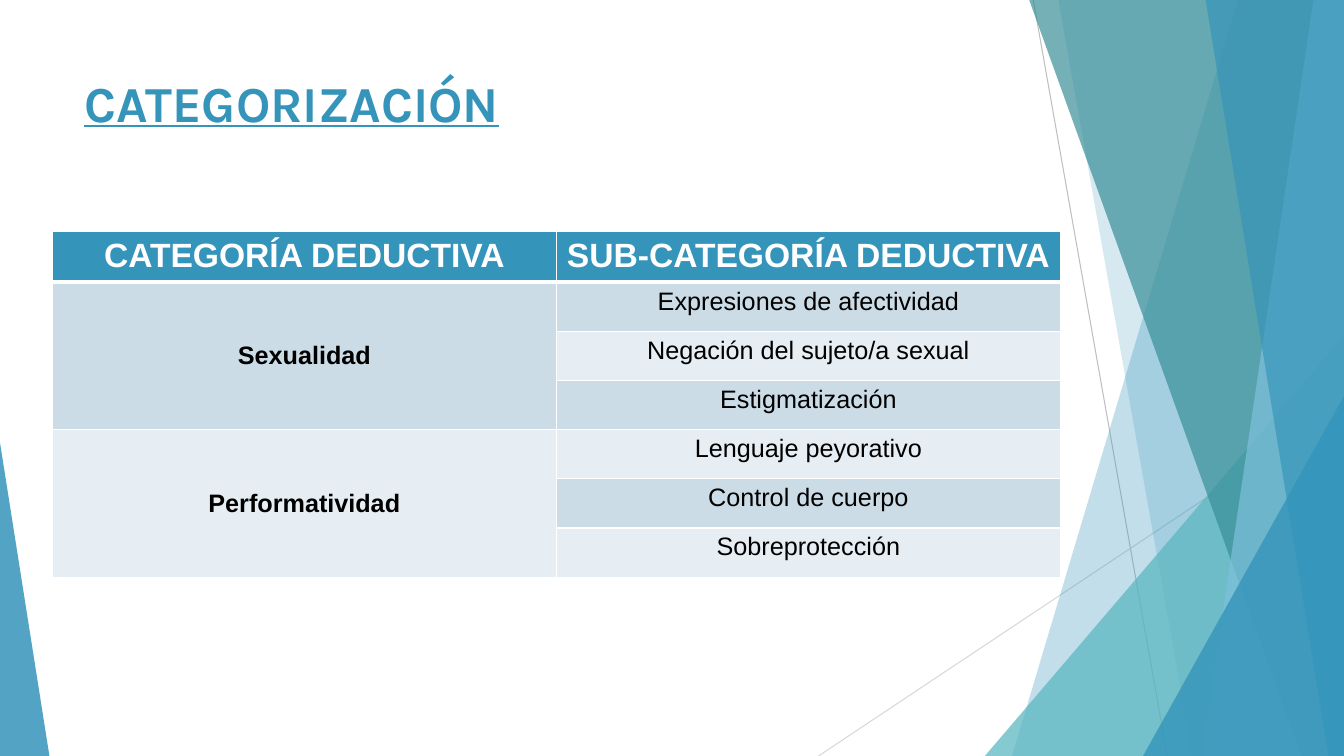
from lxml import etree
from pptx import Presentation
from pptx import util as u
from pptx.dml.color import RGBColor
from pptx.enum import shapes, text
from pptx.oxml import ns

HUES = {
    "blue": "3494BA", "aqua": "58B6C0", "teal": "398F98", "sky": "7EC0DB",
    "gray": "BFBFBF", "pale": "D8D8D8", "white": "FFFFFF", "black": "000000",
    "dark": "CCDCE6", "light": "E7EEF3",
}
GROUPS = {
    "Sexualidad": ["Expresiones de afectividad", "Negación del sujeto/a sexual", "Estigmatización"],
    "Performatividad": ["Lenguaje peyorativo", "Control de cuerpo", "Sobreprotección"],
}
HEADS = ["CATEGORÍA DEDUCTIVA", "SUB-CATEGORÍA DEDUCTIVA"]


class Deck:
    def __init__(self):
        self.show = Presentation()
        self.show.slide_width = u.Inches(13.33)
        self.show.slide_height = u.Inches(7.5)
        self.slide = self.show.slides.add_slide(self.show.slide_layouts[6])
        self.items = self.slide.shapes

    def x(self, share):
        return round(self.show.slide_width * share / 100)

    def y(self, share):
        return round(self.show.slide_height * share / 100)

    def box(self, left, top, width, height):
        return self.x(left), self.y(top), self.x(width), self.y(height)

    def color(self, name):
        return RGBColor.from_string(HUES[name])

    def child(self, node, tag, **attrs):
        return etree.SubElement(node, ns.qn(tag), attrs)

    def paint(self, shape, hue, alpha):
        shape.shadow.inherit = False
        shape.line.fill.background()
        shape.fill.solid()
        shape.fill.fore_color.rgb = self.color(hue)
        tint = shape.fill._xPr.find(ns.qn("a:solidFill"))[0]
        self.child(tint, "a:alpha", val=str(alpha * 1000))

    def line(self, x1, y1, x2, y2, hue):
        line = self.items.add_connector(
            shapes.MSO_CONNECTOR.STRAIGHT, self.x(x1), self.y(y1), self.x(x2), self.y(y2))
        line.line.color.rgb = self.color(hue)
        line.line.width = u.Pt(0.75)
        self.child(line._element.spPr, "a:effectLst")

    def band(self, top, foot, hue, alpha):
        pen = self.items.build_freeform(self.x(top), 0)
        pen.add_line_segments(
            [(self.x(100), 0), (self.x(100), self.y(100)), (self.x(foot), self.y(100))])
        self.paint(pen.convert_to_shape(), hue, alpha)

    def wedge(self, left, top, width, tip, hue, alpha):
        shape = self.items.add_shape(
            shapes.MSO_SHAPE.ISOSCELES_TRIANGLE, *self.box(left, top, width, 100 - top))
        shape.adjustments[0] = tip
        self.paint(shape, hue, alpha)

    def style(self, para, size, hue, bold, face="Arial"):
        font = para.runs[0].font
        font.name, font.size, font.bold = face, u.Pt(size), bold
        font.color.rgb = self.color(hue)
        return font

    def title(self, words, *place):
        frame = self.items.add_textbox(*self.box(*place)).text_frame
        frame.word_wrap = True
        frame.text = words
        self.style(frame.paragraphs[0], 36, "blue", True, "Karla").underline = True

    def border(self, cell, top, foot):
        props = cell._tc.get_or_add_tcPr()
        for spot, (side, width) in enumerate(zip("LRTB", (1, 1, top, foot))):
            edge = self.child(props, f"a:ln{side}", w=str(u.Pt(width)))
            fill = self.child(edge, "a:solidFill")
            self.child(fill, "a:srgbClr", val=HUES["white"])
            props.insert(spot, edge)

    def cell(self, cell, words, size, hue, bold, middle=False):
        cell.text = words
        para = cell.text_frame.paragraphs[0]
        para.alignment = text.PP_ALIGN.CENTER
        if middle:
            cell.vertical_anchor = text.MSO_ANCHOR.MIDDLE
        self.style(para, size, hue, bold)

    def table(self, heads, groups, left, top, width, height):
        count = 1 + sum(map(len, groups.values()))
        table = self.items.add_table(
            count, len(heads), *self.box(left, top, width, height * count)).table
        for row in range(count):
            table.rows[row].height = self.y(height)
            for col in range(len(heads)):
                cell = table.cell(row, col)
                cell.fill.solid()
                shade = "blue" if row == 0 else "dark" if row % 2 else "light"
                cell.fill.fore_color.rgb = self.color(shade)
                self.border(cell, 3 if row == 1 else 1, 3 if row == 0 else 1)
        for col, head in enumerate(heads):
            self.cell(table.cell(0, col), head, 24, "white", True)
        row = 1
        for name, parts in groups.items():
            first = table.cell(row, 0)
            first.merge(table.cell(row + len(parts) - 1, 0))
            self.cell(first, name, 18, "black", True, True)
            for part in parts:
                self.cell(table.cell(row, 1), part, 18, "black", False)
                row += 1


def main():
    deck = Deck()
    deck.line(76.88, 0, 86.85, 100, "gray")
    deck.line(100, 53.73, 60.9, 100, "pale")
    deck.band(92.1, 75.3, "blue", 30)
    deck.band(78.75, 88.73, "blue", 20)
    deck.wedge(73.28, 44.4, 26.72, 1, "aqua", 72)
    deck.band(76.58, 96.83, "teal", 70)
    deck.band(97.73, 89.4, "sky", 70)
    deck.band(89.7, 98.85, "blue", 65)
    deck.wedge(85.05, 52.4, 14.95, 1, "blue", 80)
    deck.wedge(0, 58.53, 3.68, 0, "blue", 85)
    deck.title("CATEGORIZACIÓN", 5.55, 8.93, 70.5, 12.27)
    deck.table(HEADS, GROUPS, 3.9, 30.67, 75, 6.5)
    deck.show.save("out.pptx")


if __name__ == "__main__":
    main()
